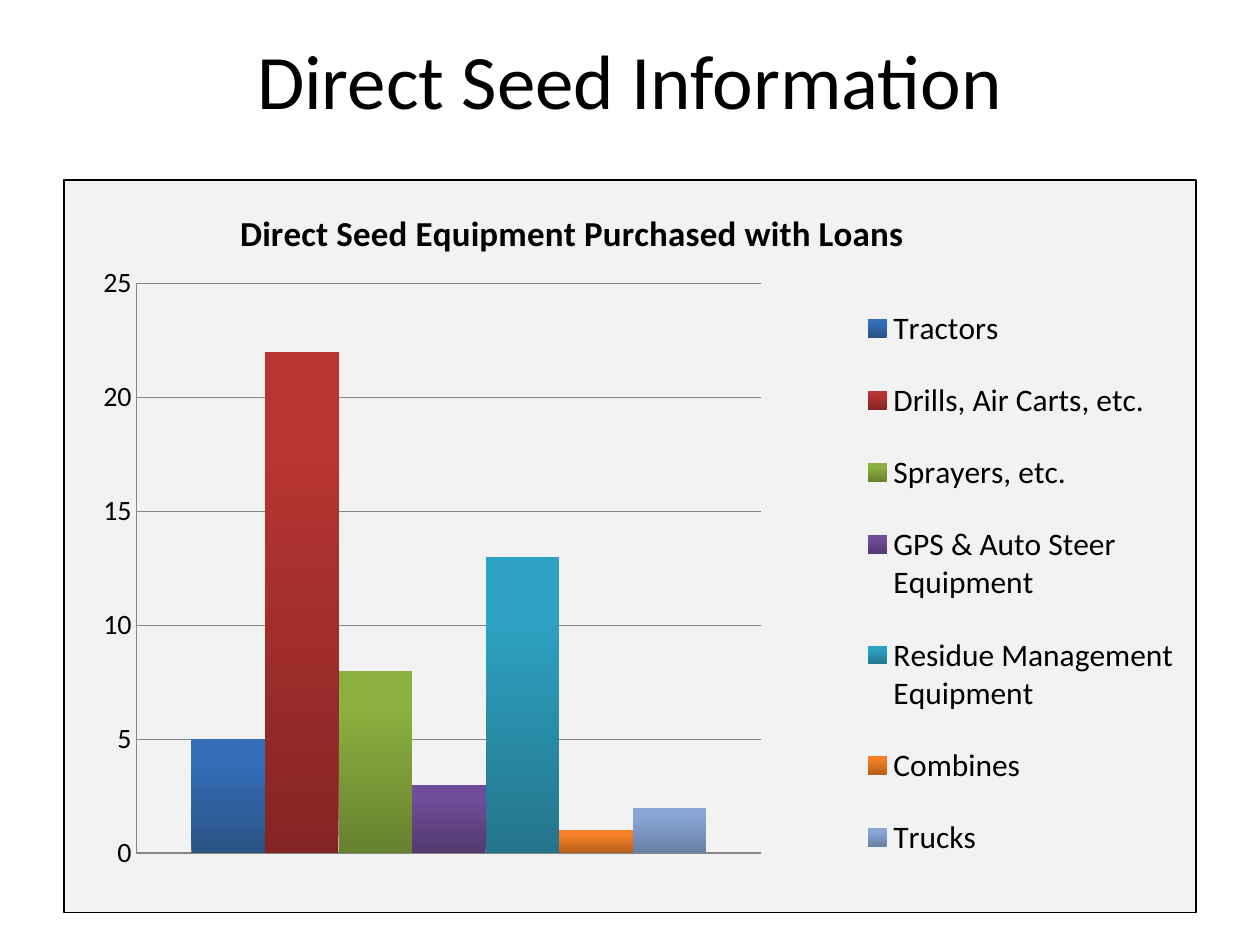
"""Build the Direct Seed Information slide with its equipment chart."""
from lxml.etree import SubElement
from pptx import Presentation
from pptx.chart.data import CategoryChartData
from pptx.dml.color import RGBColor
from pptx.enum.chart import XL_CHART_TYPE as ChartType, XL_LEGEND_POSITION as LegendPosition
from pptx.enum.chart import XL_TICK_MARK as TickMark
from pptx.enum.text import MSO_ANCHOR as Anchor, PP_ALIGN as Align
from pptx.oxml import parse_xml
from pptx.oxml.ns import nsdecls, qn
from pptx.util import Inches, Pt

FONT = "Calibri"
COLORS = {"text": "000000", "panel": "F2F2F2", "grid": "868686"}
EQUIPMENT = [
    ("Tractors", 5, "346EB9", "2A5283"),
    ("Drills, Air Carts, etc.", 22, "B73532", "852523"),
    ("Sprayers, etc.", 8, "8BB03F", "67822F"),
    ("GPS & Auto Steer Equipment", 3, "6F4D99", "533A70"),
    ("Residue Management Equipment", 13, "2DA2C3", "24758B"),
    ("Combines", 1, "F58025", "B55F1B"),
    ("Trucks", 2, "88A5D6", "6980A5"),
]


def set_layout(parent, anchor_tag, x, y, width=None, height=None, inner=False):
    for old in parent.findall(qn("c:layout")):
        parent.remove(old)
    layout = parse_xml(f"<c:layout {nsdecls('c')}><c:manualLayout/></c:layout>")
    values = [("xMode", "edge"), ("yMode", "edge"), ("x", x), ("y", y), ("w", width), ("h", height)]
    if inner:
        values.insert(0, ("layoutTarget", "inner"))
    for tag, value in values:
        if value is not None:
            SubElement(layout[0], qn(f"c:{tag}")).set("val", str(value))
    if anchor_tag:
        parent.find(qn(anchor_tag)).addnext(layout)
    else:
        parent.insert(0, layout)


def set_font(font, size, bold=False):
    font.name, font.size, font.bold = FONT, Pt(size), bold
    font.color.rgb = RGBColor.from_string(COLORS["text"])


presentation = Presentation()
presentation.slide_width, presentation.slide_height = Inches(10), Inches(7.5)
slide = presentation.slides.add_slide(presentation.slide_layouts[6])
margin, content_width = Inches(0.5), Inches(9)

title_box = slide.shapes.add_textbox(margin, 0, content_width, Inches(1.25))
frame = title_box.text_frame
frame.word_wrap = True
frame.vertical_anchor = Anchor.MIDDLE
paragraph = frame.paragraphs[0]
paragraph.text = "Direct Seed Information"
paragraph.alignment = Align.CENTER
set_font(paragraph.font, 44)

chart_data = CategoryChartData()
chart_data.categories = ["1"]
for name, count, top_color, bottom_color in EQUIPMENT:
    chart_data.add_series(name, [count])
chart = slide.shapes.add_chart(
    ChartType.COLUMN_CLUSTERED, margin, Inches(1.42), content_width, Inches(5.83), chart_data
).chart
set_font(chart.font, 10)
chart.element.find(qn("c:chart")).addnext(parse_xml(
    f'<c:spPr {nsdecls("c", "a")}>'
    f'<a:solidFill><a:srgbClr val="{COLORS["panel"]}"/></a:solidFill>'
    f'<a:ln w="{Pt(1)}"><a:solidFill><a:srgbClr val="{COLORS["text"]}"/></a:solidFill></a:ln>'
    "</c:spPr>"
))

chart.has_title = True
paragraph = chart.chart_title.text_frame.paragraphs[0]
paragraph.text = "Direct Seed Equipment Purchased with Loans"
set_font(paragraph.font, 20, bold=True)
set_layout(chart.chart_title.element if hasattr(chart.chart_title, "element")
           else chart.element.find(f".//{qn('c:title')}"), "c:tx", 0.15, 0.03)

plot = chart.plots[0]
plot.gap_width, plot.overlap, plot.vary_by_categories = 150, 0, False
set_layout(chart.element.find(f".//{qn('c:plotArea')}"), None, 0.064, 0.142, 0.552, 0.777, inner=True)
for series, (name, count, top_color, bottom_color) in zip(plot.series, EQUIPMENT):
    fill = series.format.fill
    fill.gradient()
    fill.gradient_angle = 90
    for stop, color, position in zip(fill.gradient_stops, (bottom_color, top_color), (0, 0.8)):
        stop.color.rgb = RGBColor.from_string(color)
        stop.position = position

chart.category_axis.visible = False
value_axis = chart.value_axis
value_axis.minimum_scale, value_axis.maximum_scale, value_axis.major_unit = 0, 25, 5
value_axis.major_tick_mark = value_axis.minor_tick_mark = TickMark.NONE
value_axis.has_major_gridlines = True
set_font(value_axis.tick_labels.font, 16)
for line in (value_axis.format.line, value_axis.major_gridlines.format.line):
    line.color.rgb = RGBColor.from_string(COLORS["grid"])
    line.width = Pt(0.75)

chart.has_legend = True
legend = chart.legend
legend.position = LegendPosition.RIGHT
legend.include_in_layout = False
set_font(legend.font, 18)
set_layout(chart.element.find(f".//{qn('c:legend')}"), "c:legendPos", 0.7, 0.13, 0.29, 0.84)

presentation.save("out.pptx")
